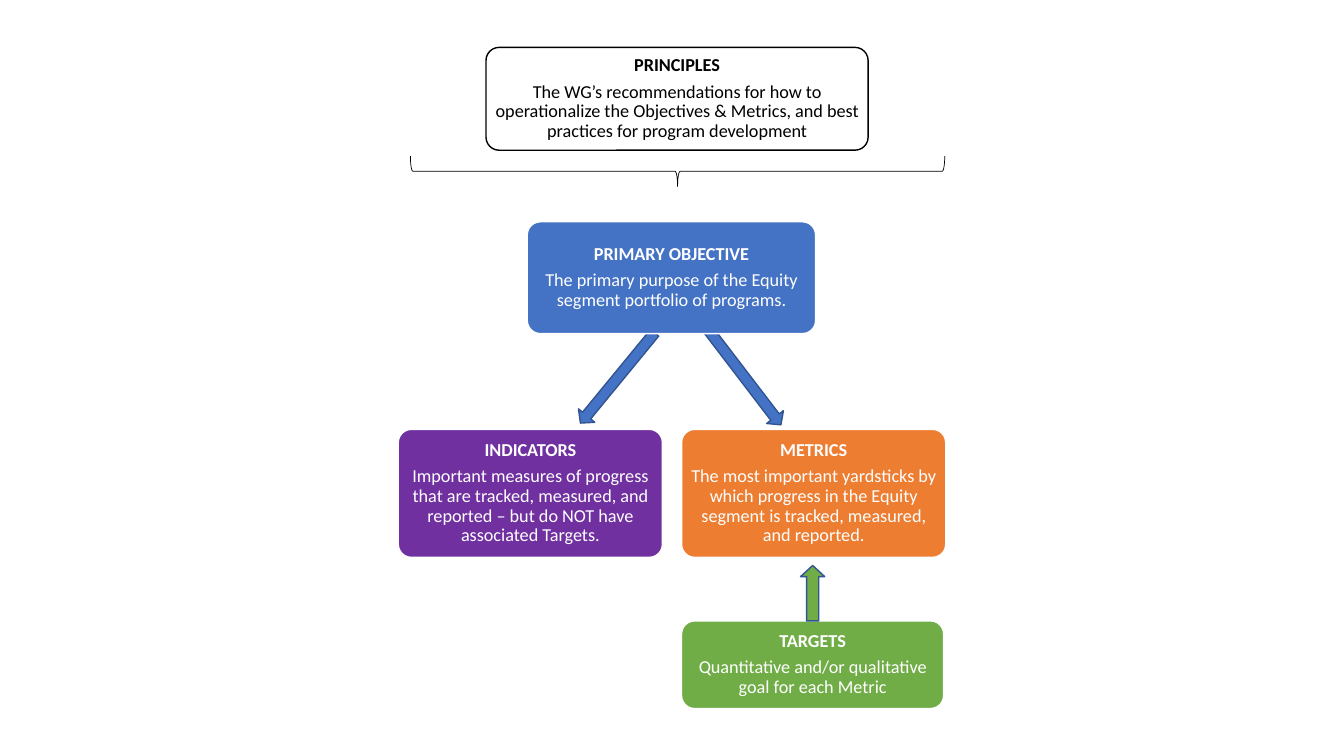
from dataclasses import dataclass

from pptx import Presentation
from pptx.dml.color import RGBColor
from pptx.enum.shapes import MSO_SHAPE
from pptx.enum.text import MSO_ANCHOR, PP_ALIGN
from pptx.util import Inches, Pt


@dataclass(frozen=True)
class Theme:
    font: str = "Calibri"
    size: float = 13
    gap: float = 4.55
    black: str = "000000"
    white: str = "FFFFFF"
    blue: str = "4472C4"
    navy: str = "325491"
    green: str = "70AD47"
    orange: str = "ED7D31"
    purple: str = "7030A0"


THEME = Theme()
RADIUS = 0.13
INSET = 0.05


def add_form(slide, kind, area, fill, line, width=1, turn=0):
    """Add a preset shape; a fill of None leaves it hollow."""
    form = slide.shapes.add_shape(kind, *map(Inches, area))
    form.shadow.inherit = False
    form.rotation = turn
    if fill:
        form.fill.solid()
        form.fill.fore_color.rgb = RGBColor.from_string(fill)
    else:
        form.fill.background()
    form.line.color.rgb = RGBColor.from_string(line)
    form.line.width = Pt(width)
    return form


def add_card(slide, area, head, body, fill=None, line=THEME.white, ink=THEME.white):
    card = add_form(slide, MSO_SHAPE.ROUNDED_RECTANGLE, area, fill, line)
    card.adjustments[0] = RADIUS / min(area[2:])
    frame = card.text_frame
    frame.word_wrap = True
    frame.vertical_anchor = MSO_ANCHOR.MIDDLE
    frame.margin_left = frame.margin_right = Inches(INSET)
    frame.margin_top = frame.margin_bottom = Inches(INSET)
    frame.text = f"{head}\n{body}"
    for row, para in enumerate(frame.paragraphs):
        para.alignment = PP_ALIGN.CENTER
        para.line_spacing = 0.9
        para.space_after = Pt(THEME.gap)
        para.font.name = THEME.font
        para.font.size = Pt(THEME.size)
        para.font.bold = row == 0
        para.font.color.rgb = RGBColor.from_string(ink)


def add_arrow(slide, area, fill, turn):
    arrow = add_form(slide, MSO_SHAPE.DOWN_ARROW, area, fill, THEME.navy, turn=turn)
    arrow.adjustments[0] = 0.5
    arrow.adjustments[1] = 0.46


def main():
    deck = Presentation()
    deck.slide_width, deck.slide_height = Inches(13.33), Inches(7.5)
    slide = deck.slides.add_slide(deck.slide_layouts[6])

    add_card(slide, (6.76, 6.16, 2.6, 0.87), "TARGETS",
             "Quantitative and/or qualitative goal for each Metric", THEME.green)
    add_card(slide, (6.76, 4.26, 2.62, 1.27), "METRICS",
             "The most important yardsticks by which progress in the Equity "
             "segment is tracked, measured, and reported.", THEME.orange)
    add_arrow(slide, (7.94, 5.61, 0.24, 0.55), THEME.green, 180)
    add_card(slide, (3.95, 4.26, 2.62, 1.27), "INDICATORS",
             "Important measures of progress that are tracked, measured, and "
             "reported – but do NOT have associated Targets.", THEME.purple)
    add_card(slide, (4.82, 0.47, 3.79, 1.02), "PRINCIPLES",
             "The WG’s recommendations for how to operationalize the Objectives "
             "& Metrics, and best practices for program development",
             line=THEME.black, ink=THEME.black)
    add_form(slide, MSO_SHAPE.RIGHT_BRACE, (6.57, -0.95, 0.3, 5.3),
             None, THEME.black, width=0.5, turn=90)
    add_arrow(slide, (6.02, 3.17, 0.21, 1.16), THEME.blue, 39.4)
    add_arrow(slide, (7.27, 3.12, 0.21, 1.22), THEME.blue, 322.6)
    add_card(slide, (5.23, 2.2, 2.86, 1.11), "PRIMARY OBJECTIVE",
             "The primary purpose of the Equity segment portfolio of programs.",
             THEME.blue)

    deck.save("out.pptx")


if __name__ == "__main__":
    main()
